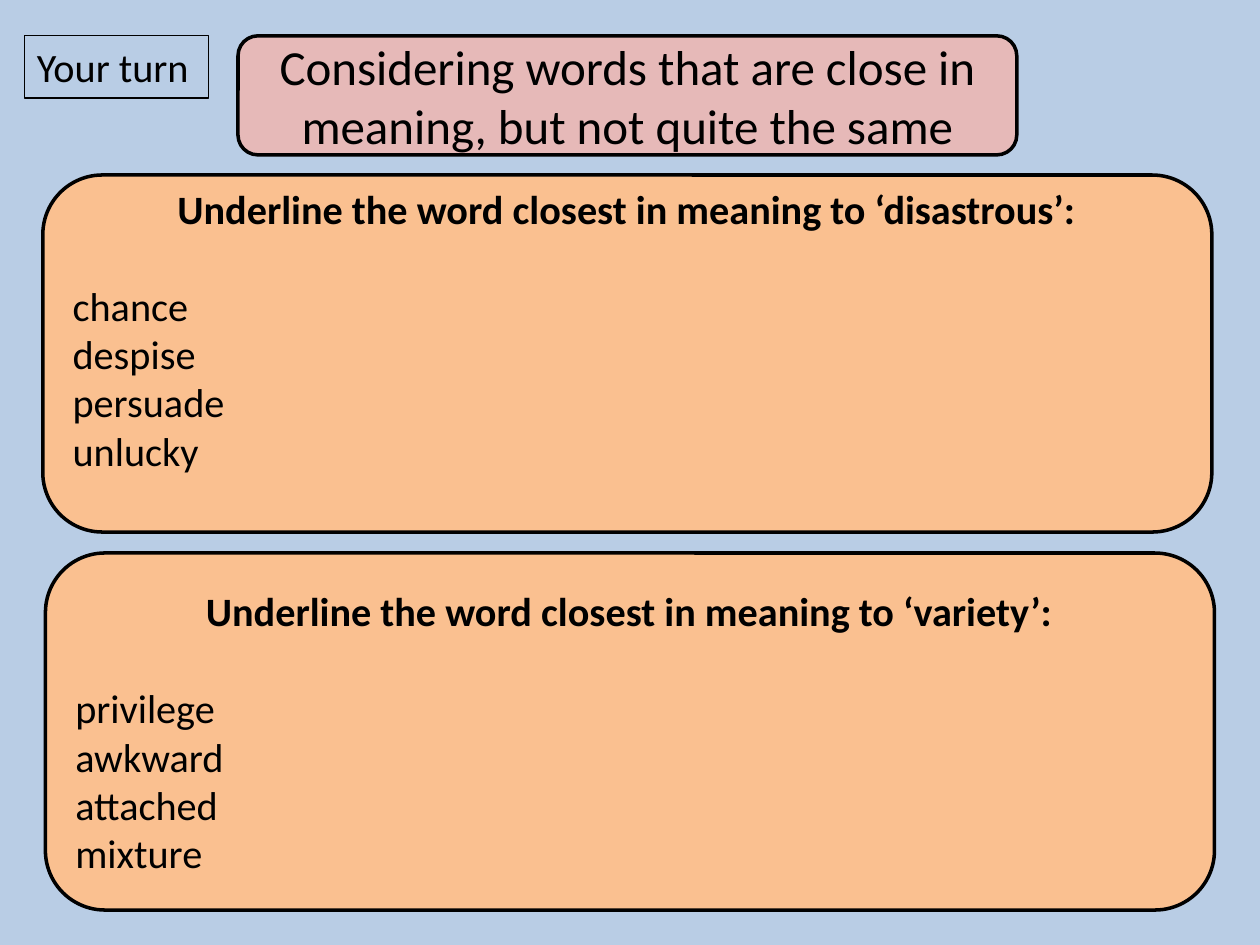
from dataclasses import dataclass

from pptx import Presentation
from pptx.dml.color import RGBColor
from pptx.enum.shapes import MSO_SHAPE as Shape
from pptx.enum.text import MSO_ANCHOR as Anchor, MSO_AUTO_SIZE as AutoSize, PP_ALIGN as Align
from pptx.util import Pt


@dataclass(frozen=True)
class Theme:
    background: RGBColor = RGBColor(0xB9, 0xCD, 0xE5)
    title_fill: RGBColor = RGBColor(0xE6, 0xB9, 0xB8)
    card_fill: RGBColor = RGBColor(0xFA, 0xC0, 0x90)
    ink: RGBColor = RGBColor(0, 0, 0)
    font: str = "Calibri"
    title_size: float = 28
    body_size: float = 23
    body_line: float = 28  # height of one line of body text
    panel_line: float = 2
    label_line: float = 0.75


THEME = Theme()
TITLE_LAYOUT = 5  # title only


def format_para(para, size, align=Align.LEFT, bold=False):
    para.alignment = align
    for span in para.runs:
        span.font.name = THEME.font
        span.font.size = Pt(size)
        span.font.bold = bold
        span.font.color.rgb = THEME.ink


def add_panel(page, box, fill):
    """Rounded panel with a black outline."""
    panel = page.shapes.add_shape(Shape.ROUNDED_RECTANGLE, *map(Pt, box))
    panel.shadow.inherit = False
    panel.fill.solid()
    panel.fill.fore_color.rgb = fill
    panel.line.color.rgb = THEME.ink
    panel.line.width = Pt(THEME.panel_line)
    return panel


def add_title(page, box, text):
    """Title placeholder lying on a rounded panel."""
    panel = add_panel(page, box, THEME.title_fill)
    title = page.shapes.title
    title.left, title.top, title.width, title.height = map(Pt, box)
    frame = title.text_frame
    frame.text = text
    frame.word_wrap = True
    frame.auto_size = AutoSize.NONE
    frame.vertical_anchor = Anchor.MIDDLE
    frame.margin_left = frame.margin_right = Pt(10)
    format_para(frame.paragraphs[0], THEME.title_size, Align.CENTER)
    # Bring the title in front of its panel
    panel._element.addnext(title._element)


def add_label(page, box, text):
    """Outlined label in the corner."""
    label = page.shapes.add_textbox(*map(Pt, box))
    label.line.color.rgb = THEME.ink
    label.line.width = Pt(THEME.label_line)
    frame = label.text_frame
    frame.text = text
    frame.word_wrap = True
    frame.auto_size = AutoSize.SHAPE_TO_FIT_TEXT
    format_para(frame.paragraphs[0], THEME.body_size)


def add_question(page, box, target, words, lift=0):
    """Question card: bold heading, a one-line gap, then the choices."""
    frame = add_panel(page, box, THEME.card_fill).text_frame
    frame.word_wrap = True
    frame.vertical_anchor = Anchor.MIDDLE
    frame.margin_bottom = Pt(3.6 + lift)
    heading = f"Underline the word closest in meaning to ‘{target}’:"
    frame.text = "\n".join([heading, *words])
    first, *choices = frame.paragraphs
    format_para(first, THEME.body_size, Align.CENTER, bold=True)
    for para in choices:
        format_para(para, THEME.body_size)
    choices[0].space_before = Pt(THEME.body_line)


def main():
    deck = Presentation()
    deck.slide_width, deck.slide_height = Pt(720), Pt(540)
    page = deck.slides.add_slide(deck.slide_layouts[TITLE_LAYOUT])
    page.background.fill.solid()
    page.background.fill.fore_color.rgb = THEME.background

    add_title(page, (136, 20.5, 445, 68),
              "Considering words that are close in meaning, but not quite the same")
    add_label(page, (14, 20.5, 105, 35.5), "Your turn")
    add_question(page, (24.5, 100, 668, 204), "disastrous",
                 ["chance", "despise", "persuade", "unlucky"], lift=THEME.body_line)
    add_question(page, (26, 316, 668, 204), "variety",
                 ["privilege", "awkward", "attached", "mixture"])
    deck.save("out.pptx")


if __name__ == "__main__":
    main()
